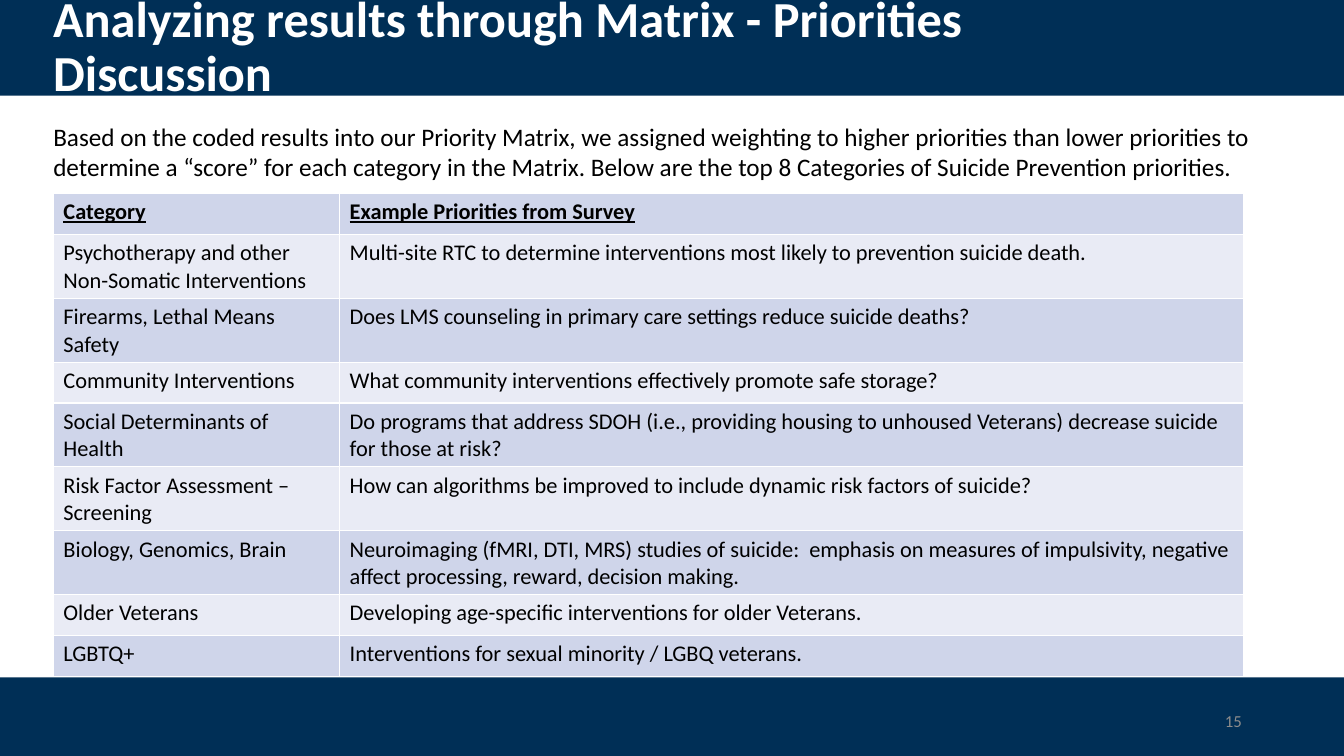
from dataclasses import dataclass
from typing import NamedTuple

from lxml.etree import SubElement
from pptx import Presentation
from pptx.dml.color import RGBColor
from pptx.enum.shapes import MSO_SHAPE
from pptx.enum.text import MSO_ANCHOR, PP_ALIGN
from pptx.oxml.ns import qn
from pptx.util import Pt


@dataclass(frozen=True)
class Theme:
    font: str = "Calibri"
    navy: str = "002F56"
    white: str = "FFFFFF"
    black: str = "000000"
    grey: str = "8C8C8C"
    bands: tuple[str, str] = ("CFD5EA", "E9EBF5")
    title_size: float = 36
    intro_size: float = 18
    table_size: float = 16
    number_size: float = 12


class Box(NamedTuple):
    left: float
    top: float
    width: float
    height: float


@dataclass(frozen=True)
class Label:
    text: str
    box: Box
    size: float
    color: str
    bold: bool = False
    align: PP_ALIGN = PP_ALIGN.LEFT
    anchor: MSO_ANCHOR = MSO_ANCHOR.MIDDLE
    line_spacing: float = 1.0


class Priority(NamedTuple):
    category: str
    example: str


THEME = Theme()
SLIDE_W, SLIDE_H = 960, 540
BARS = [Box(0, 0, SLIDE_W, 68.4), Box(0, 483.84, SLIDE_W, 56.16)]
LABELS = [
    Label("Analyzing results through Matrix - Priorities Discussion",
          Box(30.96, 7.92, 828, 53.28), THEME.title_size, THEME.white,
          bold=True, line_spacing=0.9),
    Label("15", Box(678.24, 500.4, 216, 28.8), THEME.number_size, THEME.grey,
          align=PP_ALIGN.RIGHT),
    Label("Based on the coded results into our Priority Matrix, we assigned "
          "weighting to higher priorities than lower priorities to determine a "
          "“score” for each category in the Matrix. Below are the top 8 "
          "Categories of Suicide Prevention priorities.",
          Box(30.96, 82.8, 899.28, 51.12), THEME.intro_size, THEME.black,
          anchor=MSO_ANCHOR.TOP),
]
TABLE_LEFT, TABLE_TOP = 38.16, 138.24
COLUMNS = (204.48, 645.84)
ROW_H = 29.2
ROWS = [
    Priority("Category", "Example Priorities from Survey"),
    Priority("Psychotherapy and other Non-Somatic Interventions",
             "Multi-site RTC to determine interventions most likely to "
             "prevention suicide death."),
    Priority("Firearms, Lethal Means Safety",
             "Does LMS counseling in primary care settings reduce suicide deaths?"),
    Priority("Community Interventions",
             "What community interventions effectively promote safe storage?"),
    Priority("Social Determinants of Health",
             "Do programs that address SDOH (i.e., providing housing to unhoused "
             "Veterans) decrease suicide for those at risk?"),
    Priority("Risk Factor Assessment – Screening",
             "How can algorithms be improved to include dynamic risk factors of "
             "suicide?"),
    Priority("Biology, Genomics, Brain",
             "Neuroimaging (fMRI, DTI, MRS) studies of suicide:  emphasis on "
             "measures of impulsivity, negative affect processing, reward, "
             "decision making."),
    Priority("Older Veterans",
             "Developing age-specific interventions for older Veterans."),
    Priority("LGBTQ+", "Interventions for sexual minority / LGBQ veterans."),
]


def rgb(color: str) -> RGBColor:
    return RGBColor.from_string(color)


def style_runs(p, size: float, color: str, bold: bool = False,
               underline: bool = False) -> None:
    for r in p.runs:
        r.font.name = THEME.font
        r.font.size = Pt(size)
        r.font.color.rgb = rgb(color)
        r.font.bold = bold
        r.font.underline = underline


def add_bar(s, box: Box) -> None:
    sp = s.shapes.add_shape(MSO_SHAPE.RECTANGLE, *map(Pt, box))
    sp.shadow.inherit = False
    sp.fill.solid()
    sp.fill.fore_color.rgb = rgb(THEME.navy)
    sp.line.fill.background()


def add_label(s, label: Label) -> None:
    tf = s.shapes.add_textbox(*map(Pt, label.box)).text_frame
    tf.word_wrap = True
    tf.vertical_anchor = label.anchor
    p = tf.paragraphs[0]
    p.text = label.text
    p.alignment = label.align
    p.line_spacing = label.line_spacing
    style_runs(p, label.size, label.color, label.bold)


def add_borders(cell) -> None:
    tc_pr = cell._tc.get_or_add_tcPr()
    for index, side in enumerate(("lnL", "lnR", "lnT", "lnB")):
        ln = SubElement(tc_pr, qn(f"a:{side}"), w=str(Pt(1)))
        fill = SubElement(ln, qn("a:solidFill"))
        SubElement(fill, qn("a:srgbClr"), val=THEME.white)
        tc_pr.insert(index, ln)


def add_priorities(s, rows: list[Priority]) -> None:
    table = s.shapes.add_table(
        len(rows), len(COLUMNS), Pt(TABLE_LEFT), Pt(TABLE_TOP),
        Pt(sum(COLUMNS)), Pt(ROW_H * len(rows))).table
    for column, width in zip(table.columns, COLUMNS):
        column.width = Pt(width)
    for i, row in enumerate(rows):
        table.rows[i].height = Pt(ROW_H)
        for j, text in enumerate(row):
            cell = table.cell(i, j)
            cell.fill.solid()
            cell.fill.fore_color.rgb = rgb(THEME.bands[i % 2])
            add_borders(cell)
            p = cell.text_frame.paragraphs[0]
            p.text = text
            style_runs(p, THEME.table_size, THEME.black, bold=i == 0,
                       underline=i == 0)


def main() -> None:
    prs = Presentation()
    prs.slide_width, prs.slide_height = Pt(SLIDE_W), Pt(SLIDE_H)
    s = prs.slides.add_slide(prs.slide_layouts[6])
    for bar in BARS:
        add_bar(s, bar)
    for label in LABELS:
        add_label(s, label)
    add_priorities(s, ROWS)
    prs.save("out.pptx")


if __name__ == "__main__":
    main()
